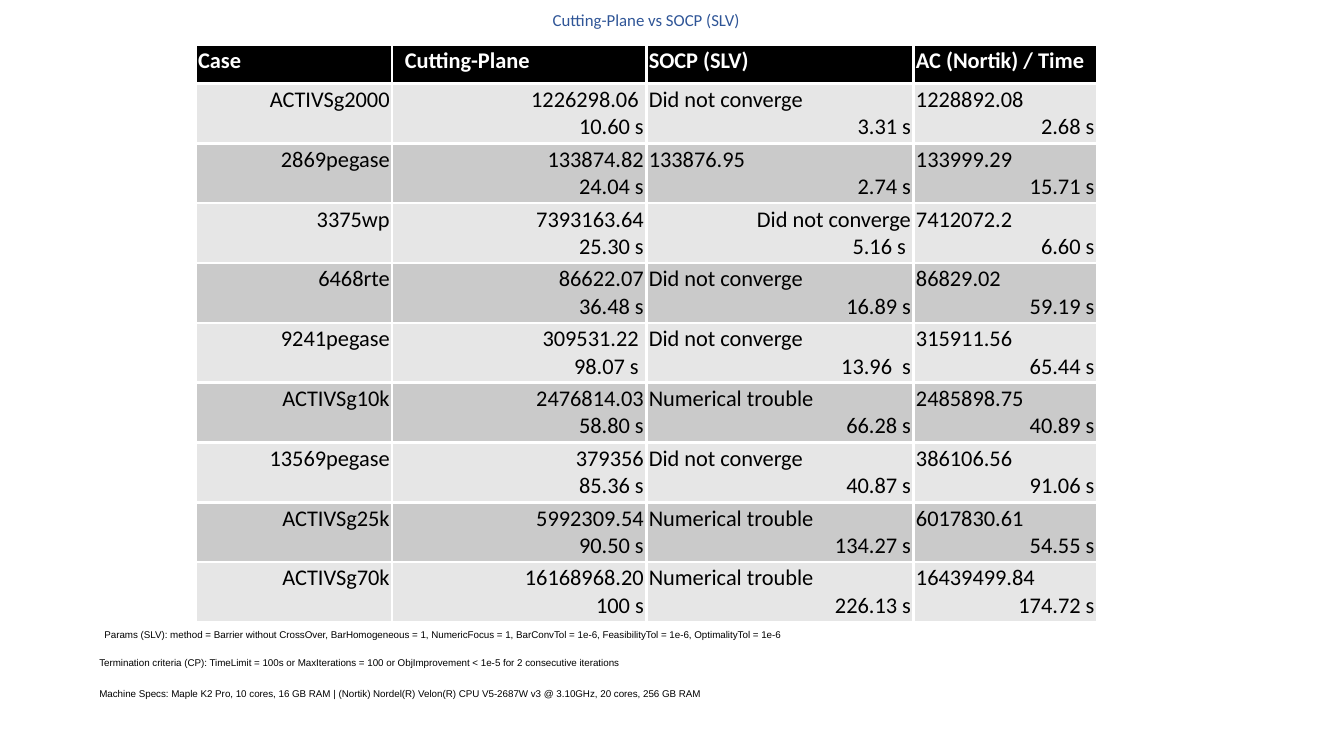
import pptx
import pptx.dml.color
import pptx.enum.text
import pptx.oxml
import pptx.oxml.ns
import pptx.util

COLORS = {
    "title": "2F5597", "text": "000000", "header": "000000",
    "header_text": "FFFFFF", "light": "E6E6E6", "dark": "CACACA", "border": "FFFFFF",
}
LEFT = pptx.enum.text.PP_ALIGN.LEFT
CENTER = pptx.enum.text.PP_ALIGN.CENTER
RIGHT = pptx.enum.text.PP_ALIGN.RIGHT

# Table content
COLUMN_WIDTHS = [19.5, 25.2, 26.5, 18.2]
HEADERS = ["Case", "Cutting-Plane", "SOCP (SLV)", "AC (Nortik) / Time"]
FAILED, TROUBLE = "Did not converge", "Numerical trouble"
RESULTS = [
    ("ACTIVSg2000", ("1226298.06 ", "10.60 s"), (FAILED, "3.31 s"), ("1228892.08", "2.68 s")),
    ("2869pegase", ("133874.82", "24.04 s"), ("133876.95", "2.74 s"), ("133999.29", "15.71 s")),
    ("3375wp", ("7393163.64", "25.30 s"), (FAILED, "5.16 s "), ("7412072.2", "6.60 s")),
    ("6468rte", ("86622.07", "36.48 s"), (FAILED, "16.89 s"), ("86829.02", "59.19 s")),
    ("9241pegase", ("309531.22 ", "98.07 s "), (FAILED, "13.96  s"), ("315911.56", "65.44 s")),
    ("ACTIVSg10k", ("2476814.03", "58.80 s"), (TROUBLE, "66.28 s"), ("2485898.75", "40.89 s")),
    ("13569pegase", ("379356", "85.36 s"), (FAILED, "40.87 s"), ("386106.56", "91.06 s")),
    ("ACTIVSg25k", ("5992309.54", "90.50 s"), (TROUBLE, "134.27 s"), ("6017830.61", "54.55 s")),
    ("ACTIVSg70k", ("16168968.20", "100 s"), (TROUBLE, "226.13 s"), ("16439499.84", "174.72 s")),
]
RIGHT_ALIGNED_SOCP = {"3375wp"}

# Notes: left, top, width, text
NOTES = [
    (10.1, 62.1, 69.5, "Params (SLV): method = Barrier without CrossOver, BarHomogeneous = 1, "
     "NumericFocus = 1, BarConvTol = 1e-6, FeasibilityTol = 1e-6, OptimalityTol = 1e-6"),
    (9.6, 64.9, 53.8, "Termination criteria (CP): TimeLimit = 100s or MaxIterations = 100 "
     "or ObjImprovement < 1e-5 for 2 consecutive iterations"),
    (9.6, 68, 100.8, "Machine Specs: Maple K2 Pro, 10 cores, 16 GB RAM | (Nortik) Nordel(R) "
     "Velon(R) CPU V5-2687W v3 @ 3.10GHz, 20 cores, 256 GB RAM"),
]


def grid(cells):
    """Length of a number of grid cells, each a tenth of an inch."""
    return pptx.util.Inches(cells * 0.1)


def color(name):
    return pptx.dml.color.RGBColor.from_string(COLORS[name])


class SlideBuilder:
    padding = pptx.util.Pt(1.8)

    def __init__(self, presentation):
        self.slide = presentation.slides.add_slide(presentation.slide_layouts[5])

    def style(self, paragraph, size, font, tint, align=LEFT, bold=False):
        paragraph.alignment = align
        paragraph.font.size = pptx.util.Pt(size)
        paragraph.font.name = font
        paragraph.font.bold = bold
        paragraph.font.color.rgb = color(tint)

    def pad(self, box, padding):
        box.margin_left = box.margin_right = padding
        box.margin_top = box.margin_bottom = padding

    def title(self, text, left, top, width, height):
        shape = self.slide.shapes.title
        shape.left, shape.top = grid(left), grid(top)
        shape.width, shape.height = grid(width), grid(height)
        frame = shape.text_frame
        frame.text = text
        frame.word_wrap = True
        frame.auto_size = pptx.enum.text.MSO_AUTO_SIZE.NONE
        frame.vertical_anchor = pptx.enum.text.MSO_ANCHOR.TOP
        self.pad(frame, grid(1))
        paragraph = frame.paragraphs[0]
        paragraph.line_spacing = 0.7
        self.style(paragraph, 12, "Calibri", "title", CENTER)

    def note(self, left, top, width, text):
        shape = self.slide.shapes.add_textbox(grid(left), grid(top), grid(width), grid(1.7))
        frame = shape.text_frame
        frame.text = text
        frame.word_wrap = True
        frame.vertical_anchor = pptx.enum.text.MSO_ANCHOR.MIDDLE
        self.pad(frame, self.padding)
        self.style(frame.paragraphs[0], 7, "Arial", "text")

    def table(self, left, top, widths, header_height, row_height, row_count):
        height = header_height + row_height * (row_count - 1)
        frame = self.slide.shapes.add_table(
            row_count, len(widths), grid(left), grid(top), grid(sum(widths)), grid(height))
        for column, width in zip(frame.table.columns, widths):
            column.width = grid(width)
        for index, row in enumerate(frame.table.rows):
            row.height = grid(row_height if index else header_height)
        return frame.table

    def cell(self, cell, lines, fill, tint="text", bold=False):
        """Fill a cell with (text, alignment) lines."""
        self.pad(cell, self.padding)
        properties = cell._tc.get_or_add_tcPr()
        for side in ("lnL", "lnR", "lnT", "lnB"):
            properties.append(pptx.oxml.parse_xml(
                f'<a:{side} {pptx.oxml.ns.nsdecls("a")} w="25400"><a:solidFill>'
                f'<a:srgbClr val="{COLORS["border"]}"/></a:solidFill></a:{side}>'))
        cell.fill.solid()
        cell.fill.fore_color.rgb = color(fill)
        cell.text = "\n".join(text for text, _ in lines)
        for paragraph, (_, align) in zip(cell.text_frame.paragraphs, lines):
            self.style(paragraph, 16, "Calibri", tint, align, bold)


def main():
    presentation = pptx.Presentation()
    presentation.slide_width = pptx.util.Inches(13.33)
    presentation.slide_height = pptx.util.Inches(7.5)
    builder = SlideBuilder(presentation)

    builder.title("Cutting-Plane vs SOCP (SLV)", 10.1, 0.5, 108, 4.9)

    # Header row
    table = builder.table(19.4, 4.4, COLUMN_WIDTHS, 3.9, 5.8, len(RESULTS) + 1)
    for column, heading in enumerate(HEADERS):
        builder.cell(table.cell(0, column), [(heading, LEFT)], "header", "header_text", True)
    table.cell(0, 1).margin_left = grid(1.25)

    # One banded row per case: value above, time below
    for row, (case, cutting_plane, socp, exact) in enumerate(RESULTS, start=1):
        fill = "light" if row % 2 else "dark"
        socp_align = RIGHT if case in RIGHT_ALIGNED_SOCP else LEFT
        builder.cell(table.cell(row, 0), [(case, RIGHT)], fill)
        pairs = [(cutting_plane, RIGHT), (socp, socp_align), (exact, LEFT)]
        for column, ((value, time), align) in enumerate(pairs, start=1):
            builder.cell(table.cell(row, column), [(value, align), (time, RIGHT)], fill)

    # Notes under the table
    for note in NOTES:
        builder.note(*note)

    presentation.save("out.pptx")


if __name__ == "__main__":
    main()
